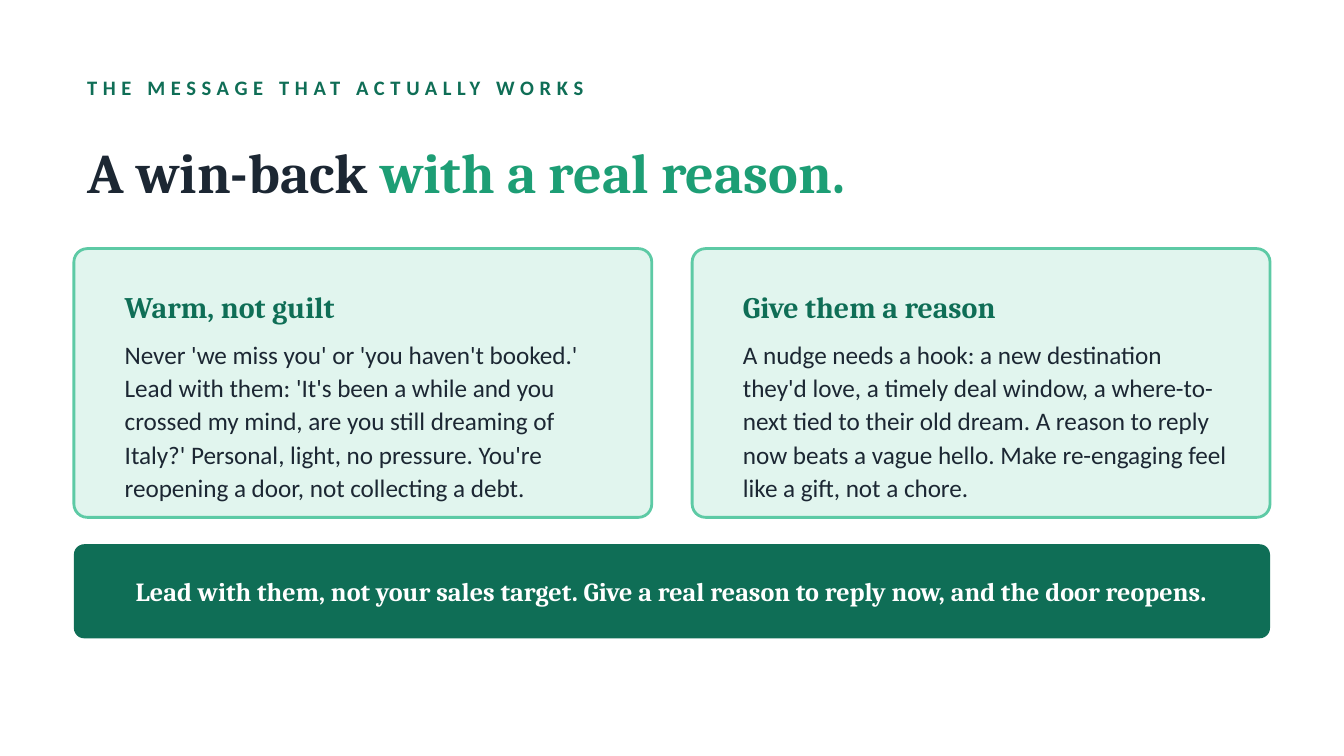
from dataclasses import dataclass

from pptx import Presentation
from pptx.dml.color import RGBColor
from pptx.enum.shapes import MSO_SHAPE as Preset
from pptx.enum.text import MSO_ANCHOR as Anchor, MSO_AUTO_SIZE as AutoSize, PP_ALIGN as Align
from pptx.util import Inches, Pt

COLORS = {
    "ink": "1C2733",
    "deep": "0F6E56",
    "accent": "1D9E75",
    "border": "5DCAA5",
    "tint": "E1F5EE",
    "white": "FFFFFF",
}
HEADING_FONT, BODY_FONT = "Cambria", "Calibri"
MARGIN, CONTENT_WIDTH = 0.55, 8.9
CARD_TOP, CARD_WIDTH, CARD_HEIGHT, CARD_GAP = 1.85, 4.3, 2, 0.3
CARD_PADDING, CARD_TEXT_WIDTH = 0.28, 3.8


@dataclass
class Box:
    left: float
    top: float
    width: float
    height: float

    def lengths(self) -> list:
        return [Inches(value) for value in (self.left, self.top, self.width, self.height)]


@dataclass
class Card:
    heading: str
    body: str


CARDS = [
    Card(
        "Warm, not guilt",
        "Never 'we miss you' or 'you haven't booked.' Lead with them: 'It's been a while "
        "and you crossed my mind, are you still dreaming of Italy?' Personal, light, no "
        "pressure. You're reopening a door, not collecting a debt.",
    ),
    Card(
        "Give them a reason",
        "A nudge needs a hook: a new destination they'd love, a timely deal window, a "
        "where-to-next tied to their old dream. A reason to reply now beats a vague hello. "
        "Make re-engaging feel like a gift, not a chore.",
    ),
]


def rgb(name: str) -> RGBColor:
    return RGBColor.from_string(COLORS[name])


def add_text(slide, box: Box, *runs: tuple[str, str], size: float, font: str = HEADING_FONT,
             bold: bool = True, align=Align.LEFT, line_spacing: float = 1.0,
             tracking: float = 0, shape=None) -> None:
    """Write (text, colour) runs in a new text box, or in the given shape."""
    if shape is None:
        shape = slide.shapes.add_textbox(*box.lengths())
    else:
        shape.left, shape.top, shape.width, shape.height = box.lengths()
    frame = shape.text_frame
    frame.word_wrap = True
    frame.auto_size = AutoSize.NONE
    frame.vertical_anchor = Anchor.MIDDLE
    paragraph = frame.paragraphs[0]
    paragraph.alignment = align
    paragraph.line_spacing = line_spacing
    for text, color in runs:
        run = paragraph.add_run()
        run.text = text
        run.font.name, run.font.size, run.font.bold = font, Pt(size), bold
        run.font.color.rgb = rgb(color)
        if tracking:
            run.font._element.set("spc", str(int(tracking * 100)))


def add_panel(slide, box: Box, fill: str, rounding: float, line: str | None = None) -> None:
    shape = slide.shapes.add_shape(Preset.ROUNDED_RECTANGLE, *box.lengths())
    shape.adjustments[0] = rounding
    shape.shadow.inherit = False
    shape.fill.solid()
    shape.fill.fore_color.rgb = rgb(fill)
    if line:
        shape.line.color.rgb = rgb(line)
        shape.line.width = Pt(1.5)
    else:
        shape.line.fill.background()


def add_card(slide, card: Card, left: float) -> None:
    add_panel(slide, Box(left, CARD_TOP, CARD_WIDTH, CARD_HEIGHT), "tint", 0.05, "border")
    text_left = left + CARD_PADDING
    add_text(slide, Box(text_left, CARD_TOP + 0.18, CARD_TEXT_WIDTH, 0.5),
             (card.heading, "deep"), size=16)
    add_text(slide, Box(text_left, CARD_TOP + 0.72, CARD_TEXT_WIDTH, 1.1),
             (card.body, "ink"), size=13.5, font=BODY_FONT, bold=False, line_spacing=1.1)


def main() -> None:
    presentation = Presentation()
    # Widescreen 16:9
    presentation.slide_width = Inches(10)
    presentation.slide_height = Inches(10 * 9 / 16)
    slide = presentation.slides.add_slide(presentation.slide_layouts[5])
    slide.background.fill.solid()
    slide.background.fill.fore_color.rgb = rgb("white")

    # Eyebrow and title
    add_text(slide, Box(MARGIN, 0.5, CONTENT_WIDTH, 0.3),
             ("THE MESSAGE THAT ACTUALLY WORKS", "deep"), size=11, font=BODY_FONT, tracking=3)
    add_text(slide, Box(MARGIN, 0.85, CONTENT_WIDTH, 0.85),
             ("A win-back ", "ink"), ("with a real reason.", "accent"),
             size=30, shape=slide.shapes.title)

    # Two advice cards
    for index, card in enumerate(CARDS):
        add_card(slide, card, MARGIN + index * (CARD_WIDTH + CARD_GAP))

    # Takeaway banner
    add_panel(slide, Box(MARGIN, 4.05, CONTENT_WIDTH, 0.7), "deep", 0.11)
    add_text(slide, Box(MARGIN + 0.25, 4.05, CONTENT_WIDTH - 0.5, 0.7),
             ("Lead with them, not your sales target. Give a real reason to reply now, "
              "and the door reopens.", "white"), size=14, align=Align.CENTER)

    presentation.save("out.pptx")


if __name__ == "__main__":
    main()
